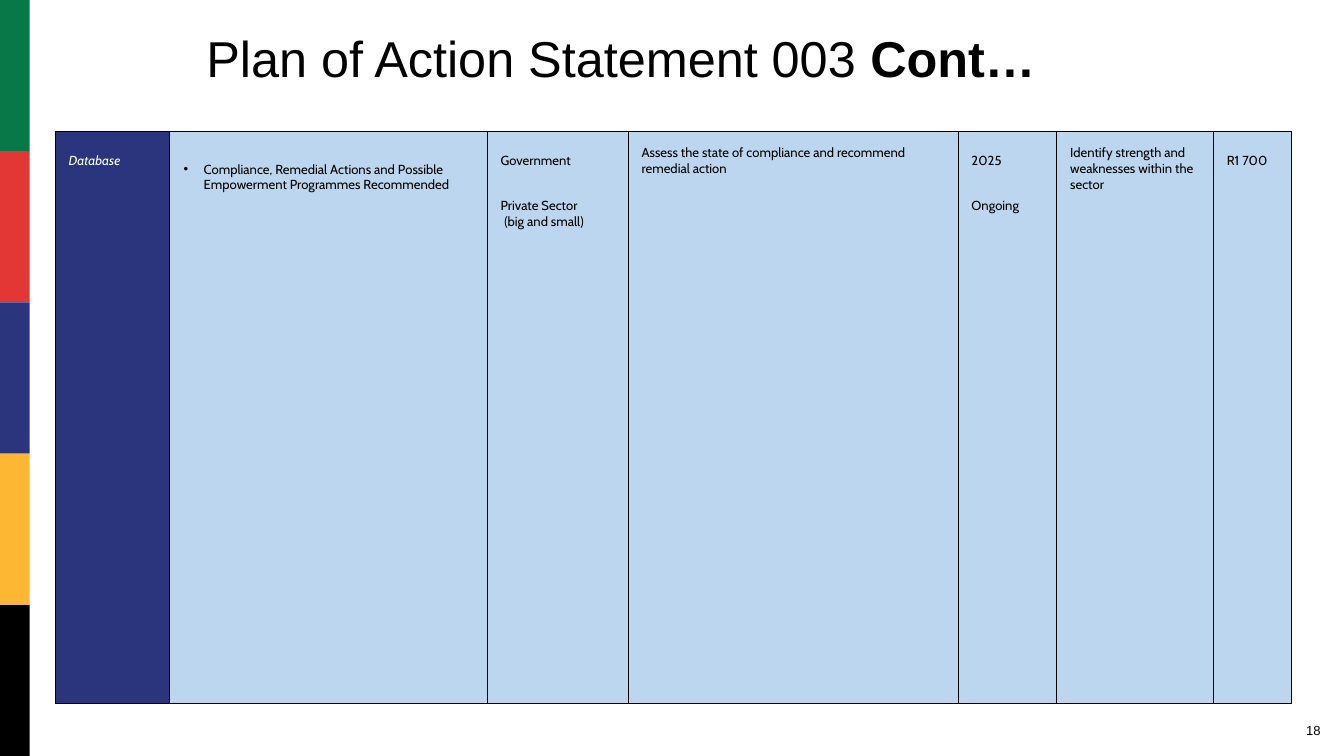
from pptx import Presentation
from pptx.dml.color import RGBColor
from pptx.enum.shapes import MSO_SHAPE
from pptx.enum.text import MSO_ANCHOR, PP_ALIGN
from pptx.oxml import parse_xml
from pptx.oxml.ns import nsdecls
from pptx.util import Cm, Pt

HUE = {"green": "097849", "red": "E33735", "navy": "2A357E",
       "gold": "FDB732", "black": "000000", "white": "FFFFFF", "sky": "BBD6EE"}
WIDE, HIGH = 50.8, 28.58
BANDS = ["green", "red", "navy", "gold", "black"]
TITLE = [("Plan of Action Statement 003", False), (" Cont…", True)]
PAGE = "18"
PAD = 0.51

# Each column: width in cm, fill, top margin in cm, paragraphs with format
TALL = {"line": 1.5}
NEXT = {"line": 1.5, "before": 22}
COLS = [
    (4.32, "navy", PAD, [("Database", {**TALL, "color": "white", "italic": True})]),
    (12.01, "sky", 1.12, [("Compliance, Remedial Actions and Possible "
                           "Empowerment Programmes Recommended",
                           {"bullet": "•", "left": 0.79, "hang": 0.76})]),
    (5.33, "sky", PAD, [("Government", TALL), ("Private Sector", NEXT),
                        ("(big and small)", {"left": 0.14})]),
    (12.47, "sky", PAD, [("Assess the state of compliance and recommend "
                          "remedial action", {})]),
    (3.73, "sky", PAD, [("2025", TALL), ("Ongoing", NEXT)]),
    (5.92, "sky", PAD, [("Identify strength and weaknesses within the sector", {})]),
    (2.97, "sky", PAD, [("R1 700", TALL)]),
]


def rgb(name):
    return RGBColor.from_string(HUE[name])


def write(para, text, font="Cabin", size=14, color="black", bold=False,
          italic=False, line=None, before=None, align=None,
          bullet=None, left=0, hang=0):
    """Add one run of text to a paragraph and format both."""
    if left:
        props = para._p.get_or_add_pPr()
        props.set("marL", str(Cm(left)))
        props.set("indent", str(-Cm(hang)))
        if bullet:
            props.append(parse_xml(f'<a:buFont {nsdecls("a")} typeface="Arial"/>'))
            props.append(parse_xml(f'<a:buChar {nsdecls("a")} char="{bullet}"/>'))
    if line:
        para.line_spacing = line
    if before:
        para.space_before = Pt(before)
    if align is not None:
        para.alignment = align
    run = para.add_run()
    run.text = text
    run.font.name, run.font.size = font, Pt(size)
    run.font.bold, run.font.italic = bold, italic
    run.font.color.rgb = rgb(color)


def edge(cell):
    """Draw a thin black border round a cell."""
    props = cell._tc.get_or_add_tcPr()
    for spot, side in enumerate(("lnL", "lnR", "lnT", "lnB")):
        props.insert(spot, parse_xml(
            f'<a:{side} {nsdecls("a")} w="{Pt(1)}"><a:solidFill>'
            f'<a:srgbClr val="{HUE["black"]}"/></a:solidFill></a:{side}>'))


def add_box(slide, *spot):
    frame = slide.shapes.add_textbox(*map(Cm, spot)).text_frame
    frame.word_wrap = True
    return frame


def main():
    deck = Presentation()
    deck.slide_width, deck.slide_height = Cm(WIDE), Cm(HIGH)
    slide = deck.slides.add_slide(deck.slide_layouts[6])

    # Title
    frame = add_box(slide, 7.42, 1.35, 33.02, 1.9)
    frame.vertical_anchor = MSO_ANCHOR.MIDDLE
    frame.margin_left = frame.margin_right = Cm(0.38)
    frame.margin_top = frame.margin_bottom = Cm(0.18)
    for text, bold in TITLE:
        write(frame.paragraphs[0], text, font="Arial", size=54, bold=bold, line=0.9)

    # Action table
    width = sum(col[0] for col in COLS)
    table = slide.shapes.add_table(1, len(COLS), Cm(2.08), Cm(4.98),
                                   Cm(width), Cm(21.62)).table
    table.first_row = table.horz_banding = False
    for spot, (wide, fill, top, paras) in enumerate(COLS):
        table.columns[spot].width = Cm(wide)
        cell = table.cell(0, spot)
        cell.fill.solid()
        cell.fill.fore_color.rgb = rgb(fill)
        cell.margin_left = cell.margin_right = cell.margin_bottom = Cm(PAD)
        cell.margin_top = Cm(top)
        edge(cell)
        frame = cell.text_frame
        for rank, (text, form) in enumerate(paras):
            para = frame.add_paragraph() if rank else frame.paragraphs[0]
            write(para, text, **form)

    # Colour bands down the left side
    step = HIGH / len(BANDS)
    for rank, name in enumerate(BANDS):
        band = slide.shapes.add_shape(MSO_SHAPE.RECTANGLE, 0, Cm(rank * step),
                                      Cm(1.12), Cm(step))
        band.shadow.inherit = False
        band.fill.solid()
        band.fill.fore_color.rgb = rgb(name)
        band.line.fill.background()

    # Page number
    frame = add_box(slide, 44.25, 27.2, 5.92, 1.02)
    write(frame.paragraphs[0], PAGE, font="Arial", align=PP_ALIGN.RIGHT)

    deck.save("out.pptx")


if __name__ == "__main__":
    main()
